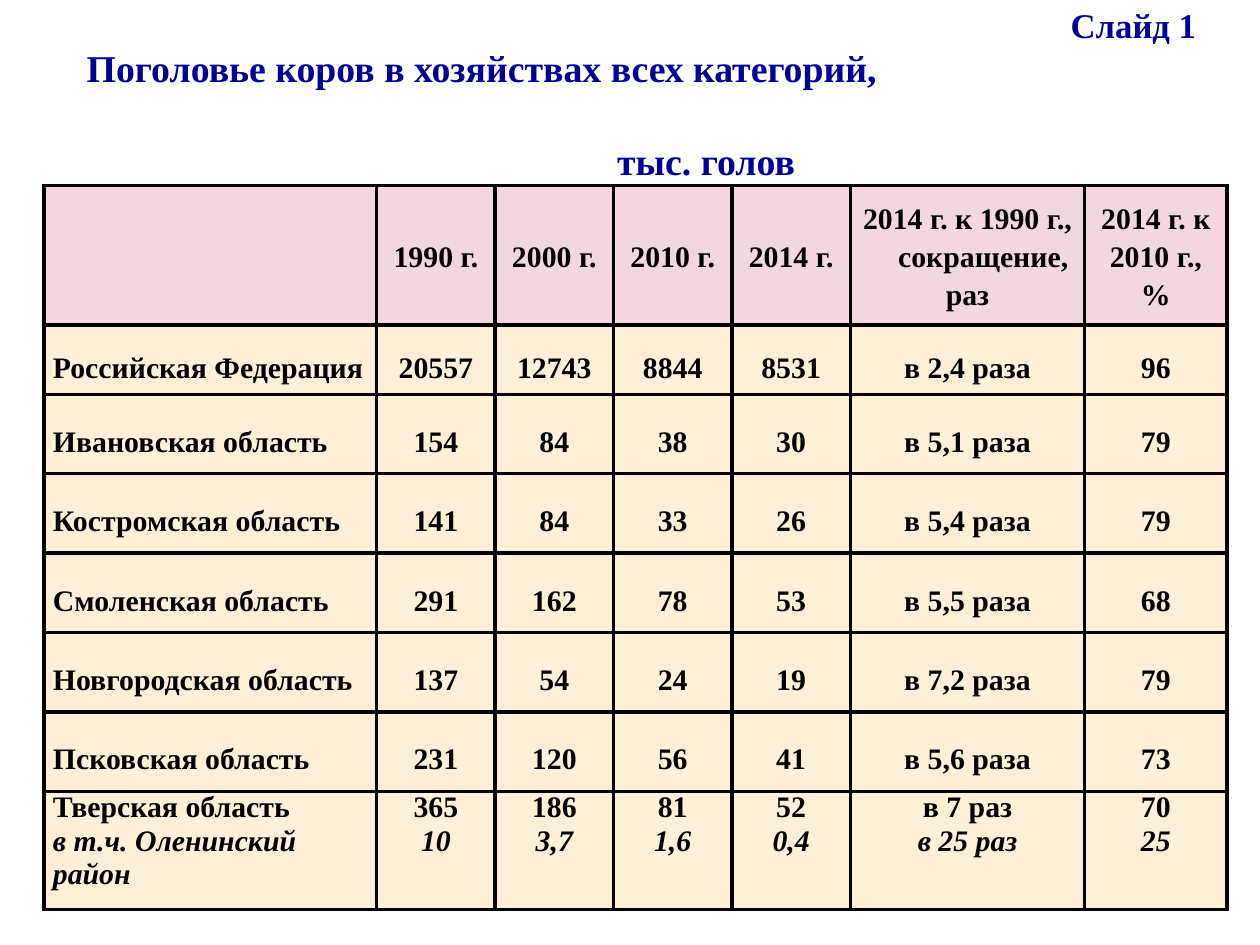
from dataclasses import dataclass

from lxml import etree
from pptx import Presentation
from pptx.dml.color import RGBColor
from pptx.enum.text import MSO_ANCHOR, PP_ALIGN
from pptx.oxml.ns import qn
from pptx.util import Inches, Pt

LEFT, CENTER, RIGHT = PP_ALIGN.LEFT, PP_ALIGN.CENTER, PP_ALIGN.RIGHT
TOP, MIDDLE = MSO_ANCHOR.TOP, MSO_ANCHOR.MIDDLE


@dataclass(frozen=True)
class Theme:
    font: str = "Times New Roman"
    title_color: str = "000099"
    text_color: str = "000000"
    border_color: str = "000000"
    header_fill: str = "F2D7E0"
    body_fill: str = "FEF0D7"
    label_size: float = 19.8
    title_size: float = 21.6
    table_size: float = 17
    border_width: float = 2.25


@dataclass(frozen=True)
class Line:
    text: str
    size: float = Theme.table_size
    color: str = Theme.text_color
    align: PP_ALIGN = CENTER
    spacing: float = 1.0
    before: float = 0
    indent: float = 0
    italic: bool = False
    number: int = 0  # automatic number in front of the line, if any


THEME = Theme()

TITLE = [
    Line("Слайд 1", THEME.label_size, THEME.title_color, RIGHT),
    Line("Поголовье коров в хозяйствах всех категорий,", THEME.title_size,
         THEME.title_color, LEFT),
    Line("тыс. голов", THEME.title_size, THEME.title_color, LEFT,
         before=27, indent=4.21),
]

COLUMN_WIDTHS = [2.64] + [0.94] * 4 + [1.86, 1.13]
ROW_HEIGHTS = [1.11, 0.55] + [0.63] * 5 + [0.94]

YEARS = ["1990 г.", "2000 г.", "2010 г.", "2014 г."]
HEADER = [
    [],
    *[[Line(year, spacing=1.15)] for year in YEARS],
    [Line(" г. к 1990 г., сокращение,", spacing=1.15, indent=0.25, number=2014),
     Line("раз", spacing=1.15)],
    [Line("2014 г. к", spacing=1.15), Line("2010 г., %", spacing=1.15)],
]

REGIONS = [
    ("Российская Федерация", "20557", "12743", "8844", "8531", "в 2,4 раза", "96"),
    ("Ивановская область", "154", "84", "38", "30", "в 5,1 раза", "79"),
    ("Костромская область", "141", "84", "33", "26", "в 5,4 раза", "79"),
    ("Смоленская область", "291", "162", "78", "53", "в 5,5 раза", "68"),
    ("Новгородская область", "137", "54", "24", "19", "в 7,2 раза", "79"),
    ("Псковская область", "231", "120", "56", "41", "в 5,6 раза", "73"),
]
TVER = ("Тверская область", "365", "186", "81", "52", "в 7 раз", "70")
OLENINO = ("в т.ч. Оленинский район", "10", "3,7", "1,6", "0,4", "в 25 раз", "25")


def column_align(column: int) -> PP_ALIGN:
    return CENTER if column else LEFT


def write_lines(frame, lines: list[Line]) -> None:
    for index, line in enumerate(lines):
        para = frame.add_paragraph() if index else frame.paragraphs[0]
        para.alignment = line.align
        para.line_spacing = line.spacing
        para.space_before = Pt(line.before)
        properties = para._p.get_or_add_pPr()
        if line.indent:
            properties.set("marL", str(Inches(line.indent)))
        if line.number:
            properties.set("indent", str(-Inches(line.indent)))
            etree.SubElement(properties, qn("a:buAutoNum"),
                             type="arabicPlain", startAt=str(line.number))
        para.add_run().text = line.text
        font = para.font
        font.name = THEME.font
        font.size = Pt(line.size)
        font.bold = True
        font.italic = line.italic
        font.color.rgb = RGBColor.from_string(line.color)


def add_borders(cell) -> None:
    properties = cell._tc.get_or_add_tcPr()
    for side in ("lnL", "lnR", "lnT", "lnB"):
        border = etree.SubElement(properties, qn(f"a:{side}"),
                                  w=str(Pt(THEME.border_width)))
        fill = etree.SubElement(border, qn("a:solidFill"))
        etree.SubElement(fill, qn("a:srgbClr"), val=THEME.border_color)


def fill_cell(cell, lines: list[Line], color: str, anchor: MSO_ANCHOR) -> None:
    cell.margin_left = cell.margin_right = Inches(0.07)
    cell.margin_top = cell.margin_bottom = 0
    cell.vertical_anchor = anchor
    add_borders(cell)
    cell.fill.solid()
    cell.fill.fore_color.rgb = RGBColor.from_string(color)
    write_lines(cell.text_frame, lines)


def add_title(slide) -> None:
    box = slide.shapes.add_textbox(Inches(0.59), Inches(0.36), Inches(9), Inches(0.76))
    box.text_frame.word_wrap = True
    box.text_frame.vertical_anchor = MIDDLE
    write_lines(box.text_frame, TITLE)


def add_herd_table(slide) -> None:
    body = [[[Line(text, align=column_align(column), spacing=1.5)]
             for column, text in enumerate(region)] for region in REGIONS]
    last = [[Line(total, align=column_align(column)),
             Line(part, align=column_align(column), italic=True)]
            for column, (total, part) in enumerate(zip(TVER, OLENINO))]
    rows = [HEADER, *body, last]

    table = slide.shapes.add_table(
        len(rows), len(COLUMN_WIDTHS), Inches(0.35), Inches(1.47),
        Inches(sum(COLUMN_WIDTHS)), Inches(sum(ROW_HEIGHTS))).table
    table.first_row = table.horz_banding = False
    for column, width in zip(table.columns, COLUMN_WIDTHS):
        column.width = Inches(width)
    for row, height in zip(table.rows, ROW_HEIGHTS):
        row.height = Inches(height)

    for row_index, row in enumerate(rows):
        color = THEME.body_fill if row_index else THEME.header_fill
        anchor = TOP if row is last else MIDDLE
        for column_index, lines in enumerate(row):
            fill_cell(table.cell(row_index, column_index), lines, color, anchor)


def main() -> None:
    deck = Presentation()
    deck.slide_width, deck.slide_height = Inches(10), Inches(7.5)
    slide = deck.slides.add_slide(deck.slide_layouts[6])
    add_title(slide)
    add_herd_table(slide)
    deck.save("out.pptx")


if __name__ == "__main__":
    main()
